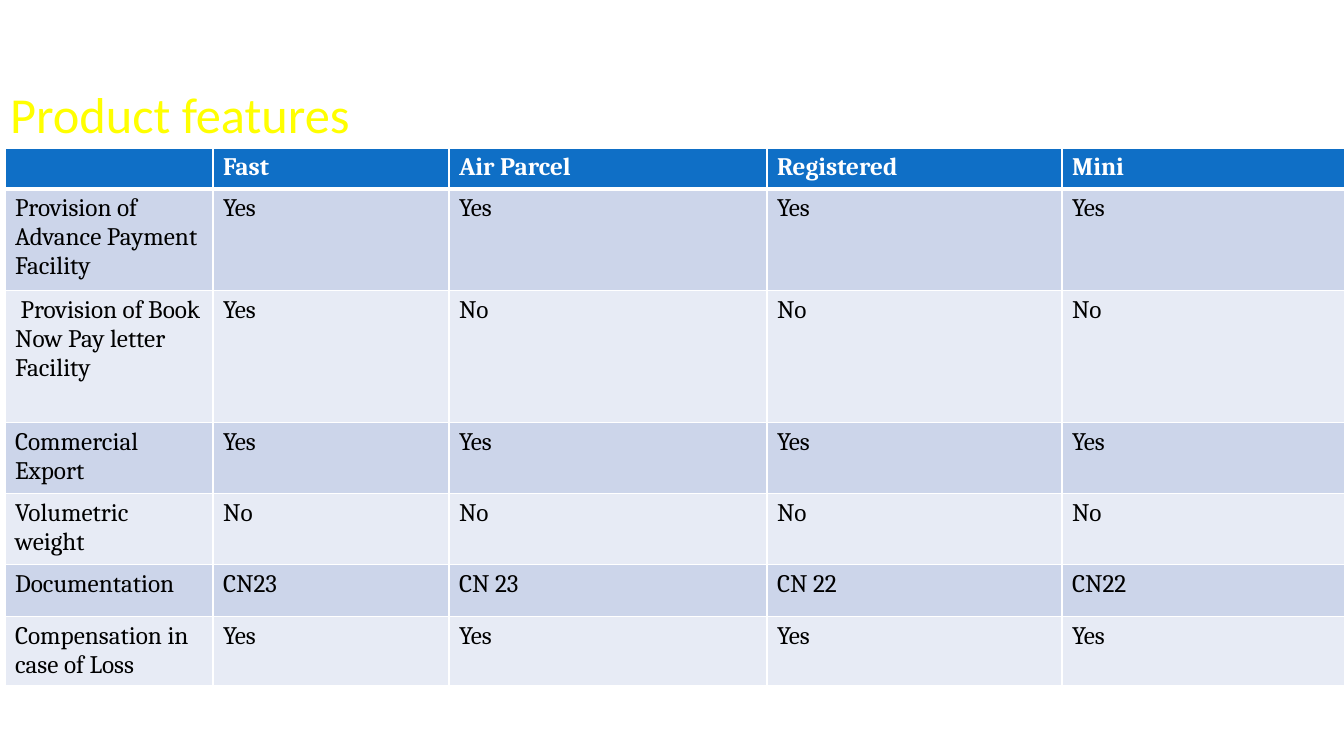
import pptx
import pptx.util
import pptx.dml.color
import pptx.enum.text
import pptx.oxml

PX = 914400 / 100.8
HUES = {"title": "FFFF00", "head": "0F6FC6", "odd": "CCD5EA",
        "even": "E7EBF5", "white": "FFFFFF", "black": "000000"}
WIDTHS = [208, 236, 318, 295, 283]
HEIGHTS = [40, 102, 132, 71, 71, 52, 52]
ROWS = [
    ["", "Fast", "Air Parcel", "Registered", "Mini"],
    ["Provision of Advance Payment Facility", "Yes", "Yes", "Yes", "Yes"],
    [" Provision of Book Now Pay letter Facility", "Yes", "No", "No", "No"],
    ["Commercial Export", "Yes", "Yes", "Yes", "Yes"],
    ["Volumetric weight", "No", "No", "No", "No"],
    ["Documentation", "CN23", "CN 23", "CN 22", "CN22"],
    ["Compensation in case of Loss", "Yes", "Yes", "Yes", "Yes"],
]


def px(*sizes):
    """Turn px lengths into EMU."""
    return [pptx.util.Emu(round(size * PX)) for size in sizes]


def edge(cell, side, width):
    """Draw one white cell border; call before the fill is set."""
    cell._tc.get_or_add_tcPr().append(pptx.oxml.parse_xml(
        f'<a:{side} xmlns:a="http://schemas.openxmlformats.org/drawingml/2006/main"'
        f' w="{pptx.util.Pt(width)}"><a:solidFill><a:srgbClr val="{HUES["white"]}"/>'
        f'</a:solidFill></a:{side}>'))


deck = pptx.Presentation()
deck.slide_width, deck.slide_height = px(1344, 756)
slide = deck.slides.add_slide(deck.slide_layouts[5])

# Title
title = slide.shapes.title
title.left, title.top, title.width, title.height = px(0, 50, 1210, 126)
frame = title.text_frame
frame.auto_size = pptx.enum.text.MSO_AUTO_SIZE.NONE
frame.vertical_anchor = pptx.enum.text.MSO_ANCHOR.MIDDLE
para = frame.paragraphs[0]
para.alignment = pptx.enum.text.PP_ALIGN.LEFT
run = para.add_run()
run.text = "Product features"
run.font.name = "Calibri"
run.font.size = pptx.util.Pt(36)
run.font.color.rgb = pptx.dml.color.RGBColor.from_string(HUES["title"])

# Feature table
table = slide.shapes.add_table(
    len(ROWS), len(WIDTHS), *px(5, 148, sum(WIDTHS), sum(HEIGHTS))).table
for column, width in zip(table.columns, px(*WIDTHS)):
    column.width = width
for row, height in zip(table.rows, px(*HEIGHTS)):
    row.height = height

for r, texts in enumerate(ROWS):
    head = r == 0
    band = "head" if head else "odd" if r % 2 else "even"
    for c, text in enumerate(texts):
        cell = table.cell(r, c)
        for side in ("lnL", "lnR", "lnT", "lnB"):
            thick = (head and side == "lnB") or (r == 1 and side == "lnT")
            edge(cell, side, 3 if thick else 1)
        cell.fill.solid()
        cell.fill.fore_color.rgb = pptx.dml.color.RGBColor.from_string(HUES[band])
        para = cell.text_frame.paragraphs[0]
        para.font.size = pptx.util.Pt(18)
        if text:
            run = para.add_run()
            run.text = text
            run.font.name = "Cambria"
            run.font.size = pptx.util.Pt(18)
            run.font.bold = head
            run.font.color.rgb = pptx.dml.color.RGBColor.from_string(
                HUES["white" if head else "black"])

deck.save("out.pptx")
